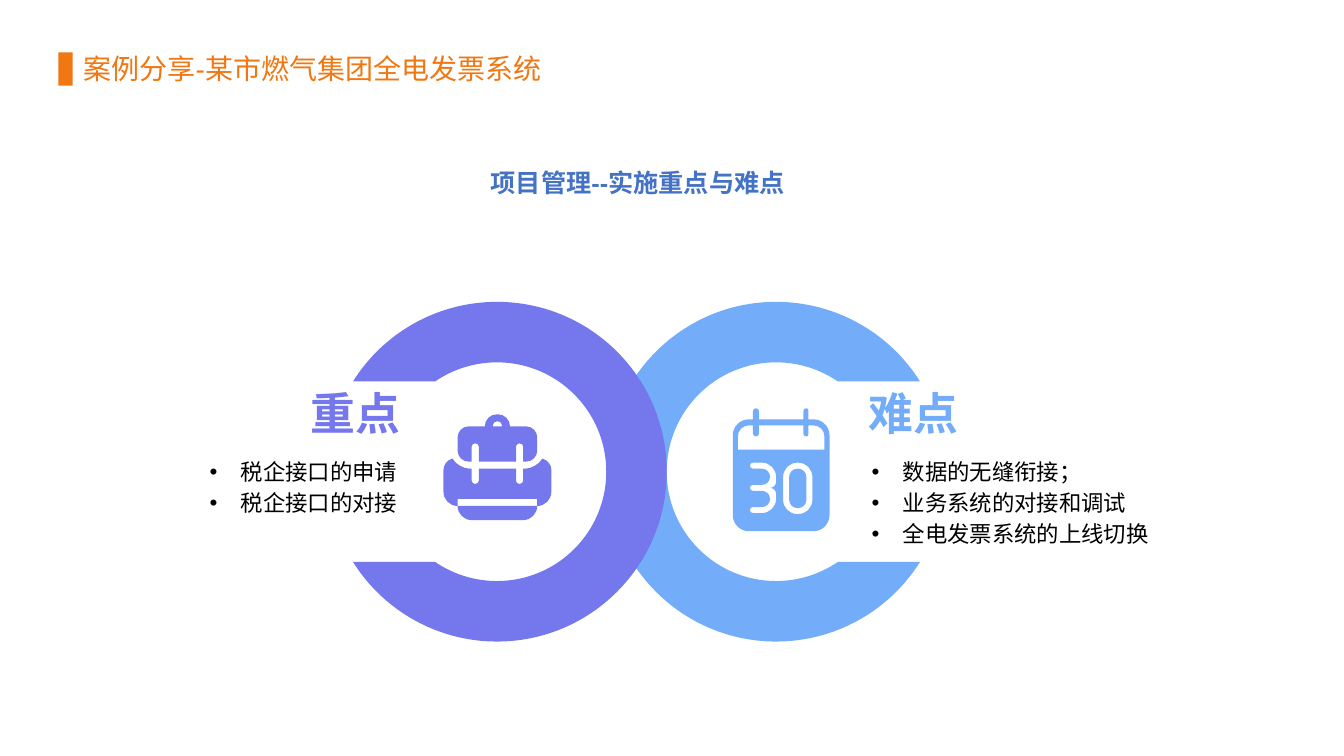
from math import asin, cos, pi, sin, tan

from lxml.etree import SubElement
from pptx import Presentation
from pptx.dml.color import RGBColor
from pptx.enum.shapes import MSO_SHAPE
from pptx.enum.text import PP_ALIGN
from pptx.oxml.ns import qn
from pptx.util import Pt

PX = 9144
ORANGE = RGBColor(0xF1, 0x77, 0x12)
BLUE = RGBColor(0x44, 0x72, 0xC4)
VIOLET = RGBColor(0x75, 0x78, 0xEC)
SKY = RGBColor(0x73, 0xAC, 0xF8)
BLACK = RGBColor(0, 0, 0)
CJK_FONT = "Noto Sans CJK SC"

RING_Y = 468
OUTER_RADIUS = 168.5
INNER_RADIUS = 108.5
GAP_HALF = 89.5

CALENDAR = [
    [(727, 416, 16), (747, 416, 0), (747, 405, 3), (753, 405, 3), (753, 416, 0),
     (797, 416, 0), (797, 405, 3), (802, 405, 2), (802, 416, 0), (823, 416, 16),
     (823, 527, 16), (727, 527, 16)],
    [(732, 422, 11), (747, 422, 0), (747, 433, 3), (753, 433, 3), (753, 422, 0),
     (797, 422, 0), (797, 433, 3), (802, 433, 2), (802, 422, 0), (818, 422, 11),
     (818, 446, 0), (732, 446, 0)],
    [(744, 459, 3), (770, 459, 14), (770, 484, 6), (764, 484, 0), (770, 484, 6),
     (770, 509, 14), (744, 509, 3), (744, 503, 3), (764, 503, 8), (764, 487, 8),
     (744, 487, 3), (744, 481, 3), (764, 481, 8), (764, 465, 8), (744, 465, 3)],
    [(777, 459, 14), (806, 459, 14), (806, 510, 14), (777, 510, 14)],
    [(783, 465, 8), (800, 465, 8), (800, 504, 8), (783, 504, 8)],
]
BACKPACK = [
    [(454, 423, 11), (481, 423, 0), (481, 411, 12), (506, 411, 12), (506, 423, 0),
     (533, 423, 11), (533, 458, 11), (519, 458, 0), (519, 440, 3), (512, 440, 3),
     (512, 458, 0), (475, 458, 0), (475, 440, 3), (468, 440, 3), (468, 458, 0),
     (454, 458, 11)],
    [(489, 423, 0), (489, 418, 4), (498, 418, 4), (498, 423, 0)],
    [(449, 455, 0), (455, 465, 11), (468, 465, 0), (468, 480, 3), (475, 480, 3),
     (475, 465, 0), (512, 465, 0), (512, 480, 3), (519, 480, 3), (519, 465, 0),
     (532, 465, 11), (538, 455, 0), (547, 458, 8), (547, 502, 14), (533, 502, 0),
     (533, 495, 0), (454, 495, 0), (454, 502, 0), (440, 502, 14), (440, 458, 8)],
    [(454, 502, 0), (533, 502, 0), (533, 516, 14), (454, 516, 14)],
]


def paint(shape, color):
    shape.shadow.inherit = False
    shape.fill.solid()
    shape.fill.fore_color.rgb = color
    shape.line.fill.background()


def toward(corner, neighbour, distance):
    dx, dy = neighbour[0] - corner[0], neighbour[1] - corner[1]
    share = distance / (dx * dx + dy * dy) ** 0.5
    return corner[0] + dx * share, corner[1] + dy * share


def round_corners(vertices):
    segments = []
    for index, corner in enumerate(vertices):
        radius = corner[2]
        if not radius:
            segments.append((corner[:2],))
            continue
        before, after = vertices[index - 1], vertices[(index + 1) % len(vertices)]
        segments.append((toward(corner, before, radius),))
        segments.append((toward(corner, before, radius * 0.45),
                         toward(corner, after, radius * 0.45),
                         toward(corner, after, radius)))
    return segments


def arc(center_x, radius, facing, turn):
    limit = pi - asin(GAP_HALF / radius)
    angles = [turn * angle for angle in (-limit, -pi / 2, 0, pi / 2, limit)]

    def locate(angle, pull=0):
        return (center_x + facing * radius * (cos(angle) - pull * sin(angle)),
                RING_Y + radius * (sin(angle) + pull * cos(angle)))

    segments = [(locate(angles[0]),)]
    for start, end in zip(angles, angles[1:]):
        pull = 4 / 3 * tan((end - start) / 4)
        segments.append((locate(start, pull), locate(end, -pull), locate(end)))
    return segments


def add_outline(shapes, contours, color):
    builder = None
    for contour in contours:
        points = [(x * PX, y * PX) for segment in contour for x, y in segment]
        if builder is None:
            builder = shapes.build_freeform(*points[0], scale=1.0)
        else:
            builder.move_to(*points[0])
        builder.add_line_segments(points[1:], close=True)
    shape = builder.convert_to_shape()
    lines = iter(list(shape._element.iter(qn("a:lnTo"))))
    for contour in contours:
        for segment in contour[1:]:
            first, *others = [next(lines) for point in segment]
            if others:
                first.tag = qn("a:cubicBezTo")
            for other in others:
                first.append(other[0])
                other.getparent().remove(other)
    paint(shape, color)


def add_open_ring(shapes, center_x, facing, color):
    outer = arc(center_x, OUTER_RADIUS, facing, 1)
    inner = arc(center_x, INNER_RADIUS, facing, -1)
    add_outline(shapes, [outer + inner], color)


def add_icon(shapes, contours, color):
    add_outline(shapes, [round_corners(contour) for contour in contours], color)


def add_text(shapes, box, lines, size, color, font, bold=False, align=PP_ALIGN.LEFT,
             spacing=None, before=None, bullet=False, inset=(10, 5)):
    frame = shapes.add_textbox(*(value * PX for value in box)).text_frame
    frame.word_wrap = True
    frame.margin_left = frame.margin_right = inset[0] * PX
    frame.margin_top = frame.margin_bottom = inset[1] * PX
    frame.text = "\n".join(lines)
    for paragraph in frame.paragraphs:
        if bullet:
            properties = paragraph._p.get_or_add_pPr()
            properties.set("marL", str(31 * PX))
            properties.set("indent", str(-31 * PX))
            SubElement(properties, qn("a:buFont")).set("typeface", "Arial")
            SubElement(properties, qn("a:buChar")).set("char", "•")
        paragraph.alignment = align
        paragraph.line_spacing = spacing
        paragraph.space_before = before
        paragraph.font.name = font
        paragraph.font.size = Pt(size)
        paragraph.font.bold = bold
        paragraph.font.color.rgb = color


def add_topic(shapes, left, list_left, list_height, heading, items, color, align):
    add_text(shapes, (left, 385, 202, 37), [heading], 32, color, CJK_FONT, bold=True,
             align=align, spacing=0.9, before=Pt(10), inset=(7, 4))
    add_text(shapes, (list_left, 446, 324, list_height), items, 16, BLACK, CJK_FONT,
             align=align, spacing=Pt(22), bullet=True)


def main():
    presentation = Presentation()
    presentation.slide_width = 750 * PX * 16 // 9
    presentation.slide_height = 750 * PX
    slide = presentation.slides.add_slide(presentation.slide_layouts[6])

    marker = slide.shapes.add_shape(MSO_SHAPE.RECTANGLE, 58 * PX, 52 * PX, 14 * PX, 33 * PX)
    paint(marker, ORANGE)
    add_text(slide.shapes, (73, 46, 512, 44), ["案例分享-某市燃气集团全电发票系统"],
             20, ORANGE, "Arial")

    diagram = slide.shapes.add_group_shape().shapes
    add_open_ring(diagram, 770, -1, SKY)
    add_icon(diagram, CALENDAR, SKY)
    add_open_ring(diagram, 493, 1, VIOLET)
    add_icon(diagram, BACKPACK, VIOLET)
    add_topic(diagram, 202, 80, 72, "重点", ["税企接口的申请", "税企接口的对接"],
              VIOLET, PP_ALIGN.RIGHT)
    add_topic(diagram, 855, 855, 102, "难点",
              ["数据的无缝衔接；", "业务系统的对接和调试", "全电发票系统的上线切换"],
              SKY, PP_ALIGN.LEFT)

    add_text(slide.shapes, (477, 161, 320, 40), ["项目管理--实施重点与难点"],
             18, BLUE, "Arial", bold=True)
    presentation.save("out.pptx")


if __name__ == "__main__":
    main()
